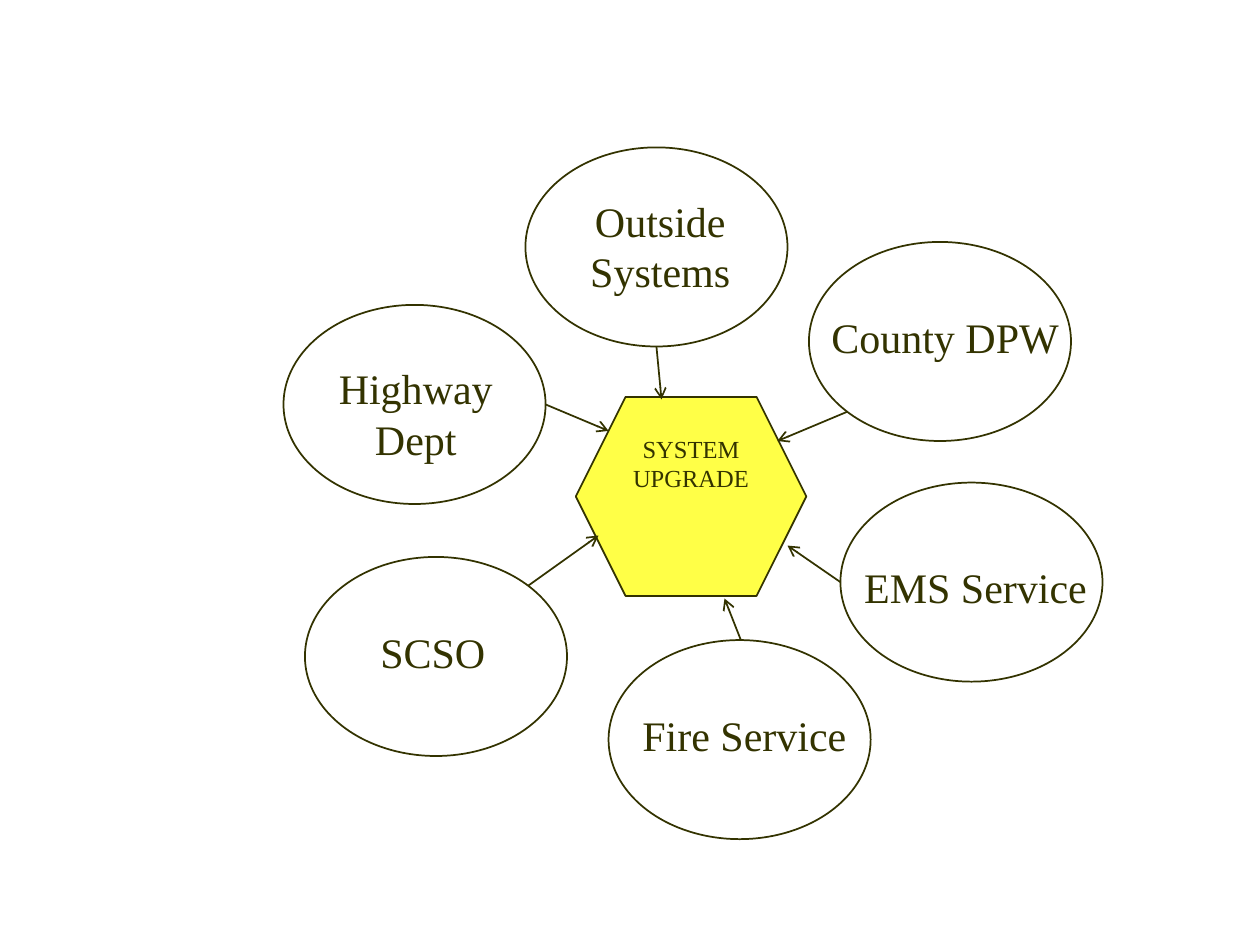
from lxml import etree
from pptx import Presentation
from pptx.dml.color import RGBColor
from pptx.enum import shapes as kinds, text as enums
from pptx.oxml import ns
from pptx.util import Inches, Pt

INK = RGBColor(0x33, 0x33, 0x00)
GOLD = RGBColor(0xFF, 0xFF, 0x47)
FONT = "Times New Roman"

NODES = [
    ("SCSO", (2.42, 4.42), (2.92, 4.92, 1.05, 0.5)),
    ("Fire Service", (4.83, 5.08), (5, 5.58, 1.84, 0.5)),
    ("EMS Service", (6.67, 3.83), (6.76, 4.41, 1.99, 0.5)),
    ("County DPW", (6.42, 1.92), (6.5, 2.42, 2.03, 0.5)),
    ("Outside\nSystems", (4.17, 1.17), (4.58, 1.5, 1.32, 0.91)),
    ("Highway\vDept", (2.25, 2.42), (2.58, 2.83, 1.44, 0.91)),
]
ARROWS = [
    (4.33, 3.21, 4.83, 3.42),
    (5.21, 2.75, 5.25, 3.17),
    (6.72, 3.27, 6.17, 3.5),
    (6.67, 4.62, 6.25, 4.33),
    (5.88, 5.08, 5.75, 4.75),
    (4.19, 4.65, 4.75, 4.25),
]


def write(shape, words, size=24, align=enums.PP_ALIGN.CENTER, wrap=False):
    frame = shape.text_frame
    frame.word_wrap = wrap
    frame.vertical_anchor = enums.MSO_ANCHOR.TOP
    frame.text = words
    for para in frame.paragraphs:
        para.alignment = align
        para.font.size = Pt(size)
        para.font.name = FONT
        para.font.color.rgb = INK


def label(slide, words, box):
    shape = slide.shapes.add_textbox(*map(Inches, box))
    lines = len(words.splitlines())
    align = enums.PP_ALIGN.CENTER if lines > 1 else enums.PP_ALIGN.LEFT
    write(shape, words, align=align)
    shape.text_frame.auto_size = enums.MSO_AUTO_SIZE.SHAPE_TO_FIT_TEXT


def block(slide, kind, box, fill=None):
    shape = slide.shapes.add_shape(kind, *map(Inches, box))
    shape.shadow.inherit = False
    if fill is None:
        shape.fill.background()
    else:
        shape.fill.solid()
        shape.fill.fore_color.rgb = fill
    shape.line.color.rgb = INK
    shape.line.width = Pt(1)
    return shape


def arrow(slide, ends):
    line = slide.shapes.add_connector(
        kinds.MSO_CONNECTOR.STRAIGHT, *map(Inches, ends))
    line.line.color.rgb = INK
    line.line.width = Pt(1)
    props = line._element.spPr
    tip = etree.SubElement(props.find(ns.qn("a:ln")), ns.qn("a:tailEnd"))
    tip.set("type", "arrow")
    etree.SubElement(props, ns.qn("a:effectLst"))


def main():
    deck = Presentation()
    deck.slide_width, deck.slide_height = Inches(10), Inches(7.5)
    slide = deck.slides.add_slide(deck.slide_layouts[6])
    for words, spot, box in NODES:
        block(slide, kinds.MSO_SHAPE.OVAL, (*spot, 2.08, 1.58))
        label(slide, words, box)
    hub = block(slide, kinds.MSO_SHAPE.HEXAGON,
                (4.57, 3.15, 1.83, 1.58), fill=GOLD)
    write(hub, "SYSTEM\nUPGRADE", size=14, wrap=True)
    for ends in ARROWS:
        arrow(slide, ends)
    deck.save("out.pptx")


if __name__ == "__main__":
    main()
